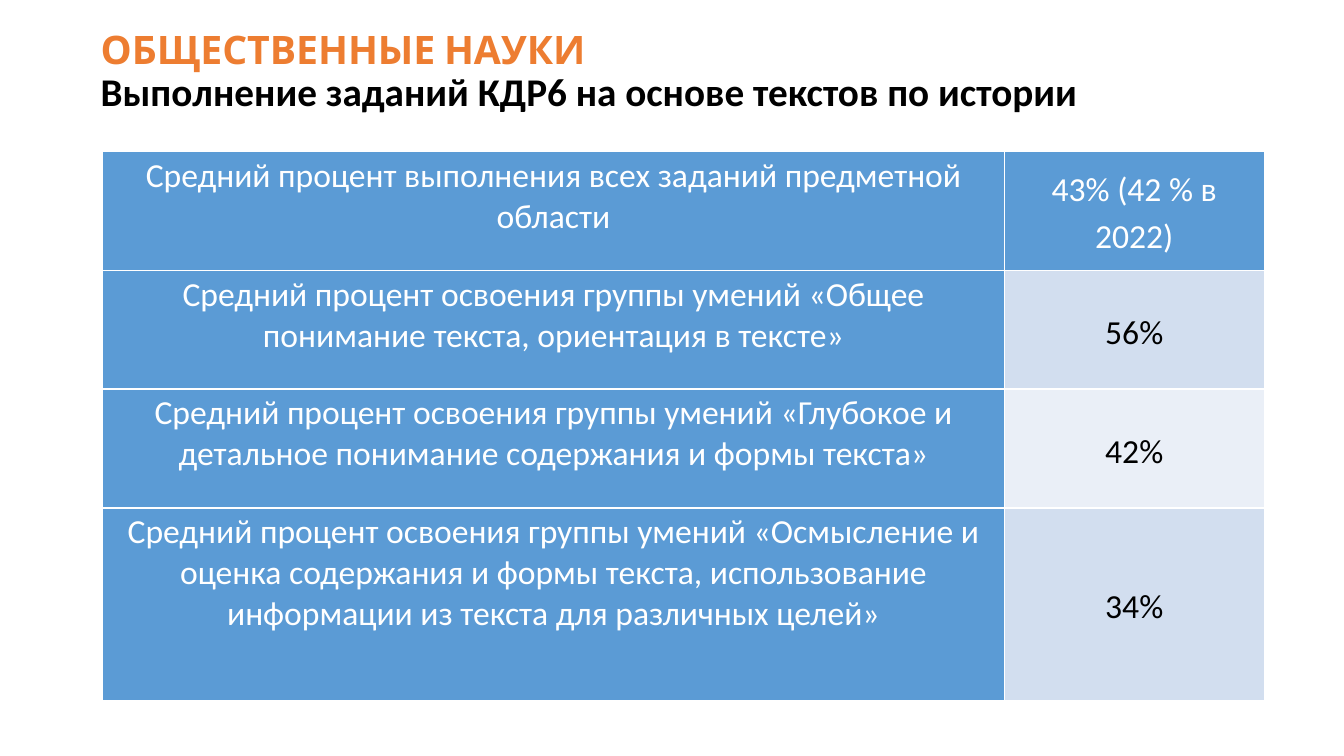
from lxml.etree import SubElement
from pptx import Presentation
from pptx.dml.color import RGBColor
from pptx.enum.text import MSO_ANCHOR, PP_ALIGN
from pptx.oxml.ns import qn
from pptx.util import Inches, Pt

TITLE = "ОБЩЕСТВЕННЫЕ НАУКИ"
SUBTITLE = "Выполнение заданий КДР6 на основе текстов по истории"
ROWS = [
    ("Средний процент выполнения всех заданий предметной области", "43% (42 % в 2022)"),
    ("Средний процент освоения группы умений «Общее понимание текста, "
     "ориентация в тексте»", "56%"),
    ("Средний процент освоения группы умений «Глубокое и детальное "
     "понимание содержания и формы текста»", "42%"),
    ("Средний процент освоения группы умений «Осмысление и оценка содержания "
     "и формы текста, использование информации из текста для различных целей»", "34%"),
]
WIDTHS = [8.94, 2.58]
HEIGHTS = [1.18, 1.18, 1.18, 1.91]

ORANGE = RGBColor(0xED, 0x7D, 0x31)
BLACK = RGBColor(0, 0, 0)
WHITE = RGBColor(255, 255, 255)
BLUE = RGBColor(0x5B, 0x9B, 0xD5)
BANDS = [RGBColor(0xEA, 0xEF, 0xF7), RGBColor(0xD2, 0xDE, 0xEF)]


def add_run(para, text, size, font, color, bold=False):
    run = para.add_run()
    run.text = text
    run.font.size = Pt(size)
    run.font.name = font
    run.font.bold = bold
    run.font.color.rgb = color


def add_edges(cell):
    props = cell._tc.get_or_add_tcPr()
    for spot, side in enumerate(("a:lnL", "a:lnR", "a:lnT", "a:lnB")):
        line = SubElement(props, qn(side), w=str(Pt(1)))
        fill = SubElement(line, qn("a:solidFill"))
        SubElement(fill, qn("a:srgbClr"), val=str(WHITE))
        props.remove(line)
        props.insert(spot, line)


def fill_cell(cell, text, fill, color):
    cell.fill.solid()
    cell.fill.fore_color.rgb = fill
    cell.margin_left = cell.margin_right = Inches(0.07)
    cell.margin_top = cell.margin_bottom = Inches(0.04)
    para = cell.text_frame.paragraphs[0]
    para.alignment = PP_ALIGN.CENTER
    add_run(para, text, 24, "Calibri", color)
    add_edges(cell)
    return para


def add_title(slide):
    box = slide.shapes.add_textbox(Inches(0.9), Inches(0.4), Inches(11.52), Inches(0.65))
    frame = box.text_frame
    frame.word_wrap = True
    frame.vertical_anchor = MSO_ANCHOR.MIDDLE
    para = frame.paragraphs[0]
    para.line_spacing = 0.9
    add_run(para, TITLE, 28, "Cabin", ORANGE, True)
    para.add_line_break()
    add_run(para, SUBTITLE, 28, "Calibri", BLACK, True)


def add_grid(slide):
    frame = slide.shapes.add_table(
        len(ROWS), len(WIDTHS), Inches(1.02), Inches(1.5),
        Inches(sum(WIDTHS)), Inches(sum(HEIGHTS)))
    table = frame.table
    for col, width in zip(table.columns, WIDTHS):
        col.width = Inches(width)
    for row, height in zip(table.rows, HEIGHTS):
        row.height = Inches(height)
    for num, (label, value) in enumerate(ROWS):
        fill_cell(table.cell(num, 0), label, BLUE, WHITE)
        cell = table.cell(num, 1)
        cell.vertical_anchor = MSO_ANCHOR.MIDDLE
        fill, color = (BANDS[num % 2], BLACK) if num else (BLUE, WHITE)
        para = fill_cell(cell, value, fill, color)
        para.line_spacing = 1.15
        para.space_after = Pt(10)


def main():
    deck = Presentation()
    deck.slide_width = Inches(13.33)
    deck.slide_height = Inches(7.5)
    slide = deck.slides.add_slide(deck.slide_layouts[6])
    add_title(slide)
    add_grid(slide)
    deck.save("out.pptx")


if __name__ == "__main__":
    main()
